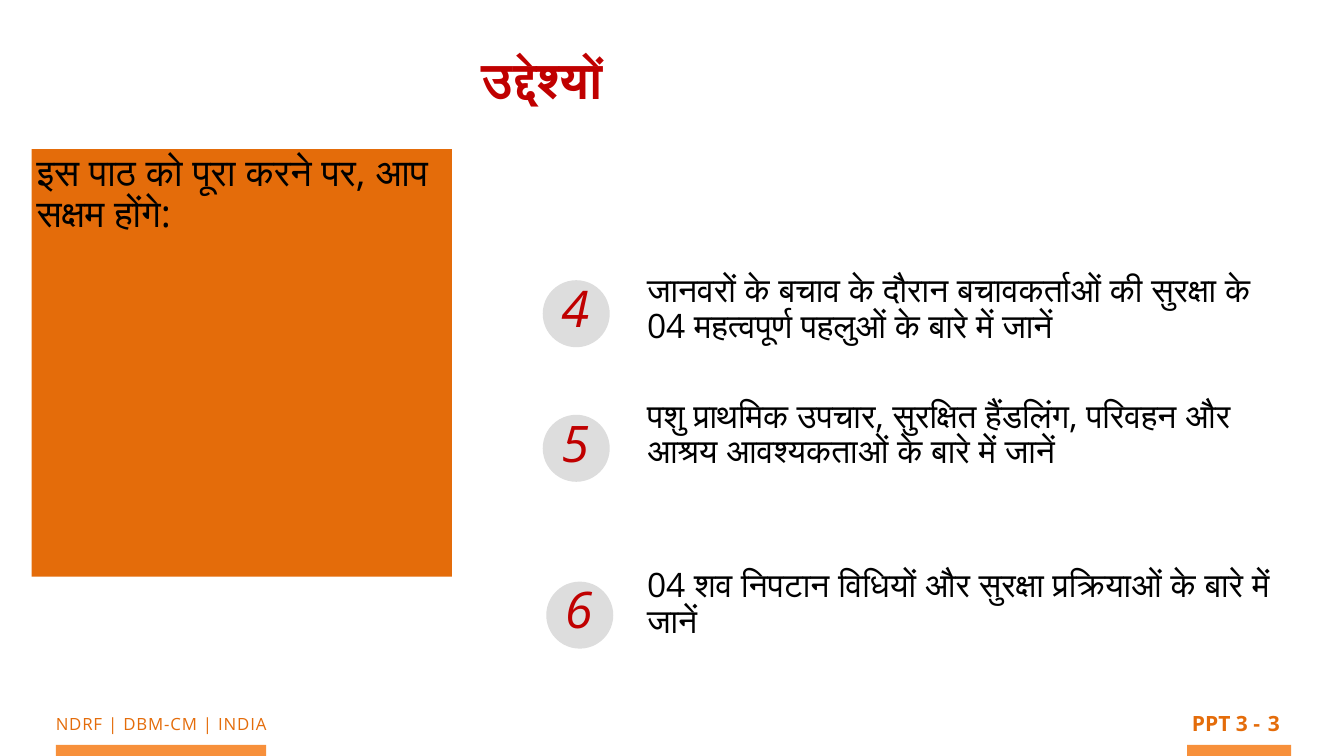
from lxml import etree
from pptx import Presentation
from pptx.dml.color import RGBColor
from pptx.enum import shapes, text
from pptx.oxml import ns
from pptx.util import Inches, Pt

FONT = "Open Sans"
ORANGE, LIGHT_ORANGE, RED, GREY, BLACK = "E46C0A", "F7903B", "C00000", "DDDDDD", "000000"

TITLE = "उद्देश्यों"
INTRO = "इस पाठ को पूरा करने पर, आप सक्षम होंगे:"
COURSE = "NDRF | DBM-CM | INDIA"
LESSON = "PPT 3 -"
PAGE = "3"
OBJECTIVES = [
    ("4", 10.77, 5.56, 0, "जानवरों के बचाव के दौरान बचावकर्ताओं की सुरक्षा के 04 महत्वपूर्ण पहलुओं के बारे में जानें"),
    ("5", 10.77, 8.23, 78, "पशु प्राथमिक उपचार, सुरक्षित हैंडलिंग, परिवहन और आश्रय आवश्यकताओं के बारे में जानें"),
    ("6", 10.84, 11.54, 141, "04 शव निपटान विधियों और सुरक्षा प्रक्रियाओं के बारे में जानें"),
]
FOOTER_BARS = [(1.11, 4.17), (23.56, 2.06)]
BADGE = 1.33


def color(value):
    return RGBColor.from_string(value)


def style(paragraph, size, fill, bold=False, italic=False, align=text.PP_ALIGN.LEFT, spacing=None):
    paragraph.alignment = align
    if spacing:
        paragraph.line_spacing = spacing
    font = paragraph.font
    font.size, font.name, font.bold, font.italic = Pt(size), FONT, bold, italic
    font.color.rgb = color(fill)
    defaults = paragraph._p.pPr.find(ns.qn("a:defRPr"))
    etree.SubElement(defaults, ns.qn("a:cs")).set("typeface", FONT)


def set_margins(frame, margin, wrap=True):
    frame.word_wrap = wrap
    frame.vertical_anchor = text.MSO_ANCHOR.TOP
    frame.margin_left = frame.margin_right = Inches(margin)
    frame.margin_top = frame.margin_bottom = Inches(margin)


def add_block(parent, kind, left, top, width, height, fill):
    block = parent.add_shape(kind, Inches(left), Inches(top), Inches(width), Inches(height))
    block.shadow.inherit = False
    block.fill.solid()
    block.fill.fore_color.rgb = color(fill)
    block.line.fill.background()
    return block


def add_text(parent, words, left, top, width, height, size, fill, wrap=True, **look):
    box = parent.add_textbox(Inches(left), Inches(top), Inches(width), Inches(height))
    set_margins(box.text_frame, 0.09, wrap)
    paragraph = box.text_frame.paragraphs[0]
    paragraph.text = words
    style(paragraph, size, fill, **look)
    return box


def main():
    deck = Presentation()
    deck.slide_width, deck.slide_height = Inches(26.67), Inches(15)
    slide = deck.slides.add_slide(deck.slide_layouts[6])
    canvas = slide.shapes
    rect, oval = shapes.MSO_SHAPE.RECTANGLE, shapes.MSO_SHAPE.OVAL
    center = text.PP_ALIGN.CENTER

    for left, width in FOOTER_BARS:
        add_block(canvas, rect, left, 14.78, width, 0.22, LIGHT_ORANGE)
    course = add_text(canvas, COURSE, 0.66, 14.08, 5.08, 0.58, 24, ORANGE, align=center)
    course.text_frame.paragraphs[0].runs[0]._r.get_or_add_rPr().set("spc", "120")
    add_text(canvas, LESSON, 23.56, 14.01, 1.54, 0.68, 30, ORANGE, wrap=False, bold=True, align=center)
    add_text(canvas, PAGE, 25.07, 14.01, 0.42, 0.74, 30, ORANGE, bold=True, align=center)

    intro = add_block(canvas, rect, 0.63, 2.96, 8.34, 8.48, ORANGE).text_frame
    set_margins(intro, 0.1)
    intro.text = INTRO
    style(intro.paragraphs[0], 54, BLACK, spacing=0.9)

    add_text(canvas, TITLE, 9.47, 0.86, 3.33, 1.38, 72, RED, wrap=False, bold=True)

    goals = canvas.add_textbox(Inches(12.75), Inches(5.35), Inches(12.77), Inches(8.14)).text_frame
    set_margins(goals, 0.09)
    for index, (number, left, top, gap, goal) in enumerate(OBJECTIVES):
        paragraph = goals.add_paragraph() if index else goals.paragraphs[0]
        paragraph.text = goal
        if gap:
            paragraph.space_before = Pt(gap)
        style(paragraph, 48, BLACK, spacing=0.88)

        badge = canvas.add_group_shape().shapes
        add_block(badge, oval, left, top, BADGE, BADGE, GREY)
        add_text(badge, number, left + 0.28, top - 0.15, 0.9, 1.84, 72, RED, italic=True)

    deck.save("out.pptx")


if __name__ == "__main__":
    main()
